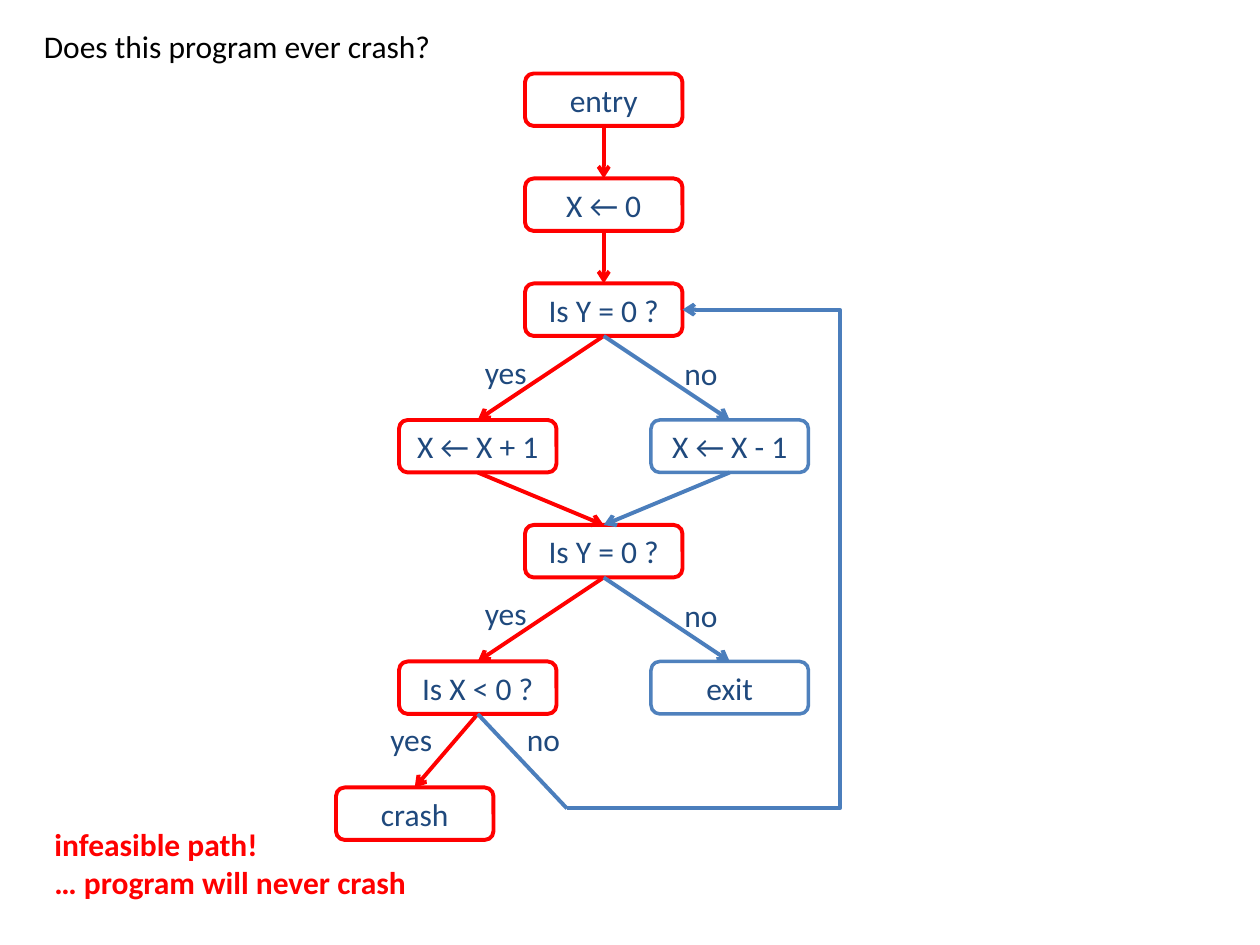
import pptx
import pptx.util
import pptx.dml.color
import pptx.enum.shapes
import pptx.enum.text
import pptx.oxml
import pptx.oxml.ns

# Positions are in grid units of 1/12 inch.
UNIT = pptx.util.Inches(1) / 12
BOX_W, BOX_H = 15, 5
TOP, BOTTOM = 0, 2  # connection sites of a box

THEME = dict(font="Calibri", size=18, text="1F497D", title="000000",
             path="FF0000", node="4F81BD", edge="4B7EBC",
             path_line=2.25, node_line=2, edge_line=2.25)

# name: (text, column, row, style)
NODES = {
    "entry": ("entry", 50, 7, "path"),
    "init": ("X ← 0", 50, 17, "path"),
    "first test": ("Is Y = 0 ?", 50, 27, "path"),
    "add": ("X ← X + 1", 38, 40, "path"),
    "subtract": ("X ← X - 1", 62, 40, "node"),
    "second test": ("Is Y = 0 ?", 50, 50, "path"),
    "sign test": ("Is X < 0 ?", 38, 63, "path"),
    "exit": ("exit", 62, 63, "node"),
    "crash": ("crash", 32, 75, "path"),
}
EDGES = [
    ("entry", "init", "path"),
    ("init", "first test", "path"),
    ("first test", "add", "path"),
    ("first test", "subtract", "edge"),
    ("add", "second test", "path"),
    ("subtract", "second test", "edge"),
    ("second test", "sign test", "path"),
    ("second test", "exit", "edge"),
    ("sign test", "crash", "path"),
]
# text lines, left, top, width, height, colour, bold, wrap
TEXTS = [
    *[(["yes"], x, y, 6.5, 4.8, "text", False, False)
      for x, y in [(45, 33), (45, 56), (36, 68)]],
    *[(["no"], x, y, 5.6, 4.8, "text", False, False)
      for x, y in [(64, 33.1), (64, 56.2), (49, 68)]],
    (["infeasible path!", "… program will never crash"],
     4, 78, 36.1, 8.5, "path", True, False),
    (["Does this program ever crash?"], 3, 2, 44, 4.8, "title", False, True),
]
LOOP_START, LOOP_LANE, LOOP_END = (54, 77), 80, (65, 29.5)


def grid(*values):
    return [round(v * UNIT) for v in values]


def color(name):
    return pptx.dml.color.RGBColor.from_string(THEME[name])


def write(sp, lines, name, bold=False, align=pptx.enum.text.PP_ALIGN.LEFT):
    tf = sp.text_frame
    tf.text = "\n".join(lines)
    for p in tf.paragraphs:
        p.alignment = align
        for r in p.runs:
            r.font.name = THEME["font"]
            r.font.size = pptx.util.Pt(THEME["size"])
            r.font.bold = bold
            r.font.color.rgb = color(name)
    return tf


def stroke(sp, style):
    sp.line.color.rgb = color(style)
    sp.line.width = pptx.util.Pt(THEME[style + "_line"])


def add_box(shapes, text, col, row, style):
    sp = shapes.add_shape(pptx.enum.shapes.MSO_SHAPE.ROUNDED_RECTANGLE,
                          *grid(col, row, BOX_W, BOX_H))
    sp.shadow.inherit = False
    sp.fill.background()
    stroke(sp, style)
    tf = write(sp, [text], "text", align=pptx.enum.text.PP_ALIGN.CENTER)
    tf.vertical_anchor = pptx.enum.text.MSO_ANCHOR.MIDDLE
    return sp


def add_line(shapes, start, end, style, kind="STRAIGHT", arrow=True):
    line = shapes.add_connector(pptx.enum.shapes.MSO_CONNECTOR[kind],
                                *grid(*start, *end))
    stroke(line, style)
    if arrow:
        ln = line.line._get_or_add_ln()
        pptx.oxml.ns.qn("a:tailEnd")
        ln.append(pptx.oxml.parse_xml(
            '<a:tailEnd %s type="arrow"/>' % pptx.oxml.ns.nsdecls("a")))
    line._element.spPr.append(pptx.oxml.parse_xml(
        "<a:effectLst %s/>" % pptx.oxml.ns.nsdecls("a")))
    return line


def add_loop(shapes, start, lane, end):
    """Run right from start to the lane, up it, and back left to end."""
    (x1, y1), (x2, y2) = start, end
    cx, cy = (x1 + x2) / 2, (y1 + y2) / 2
    half_w, half_h = (y1 - y2) / 2, (x2 - x1) / 2  # before the quarter turn
    line = add_line(shapes, (cx + half_w, cy + half_h),
                    (cx - half_w, cy - half_h), "edge", "ELBOW")
    spPr = line._element.spPr
    spPr.find(pptx.oxml.ns.qn("a:xfrm")).set("rot", str(90 * 60000))
    geom = spPr.find(pptx.oxml.ns.qn("a:prstGeom"))
    geom.set("prst", "bentConnector4")
    turn = round((lane - x1) / (x2 - x1) * 100000)
    guides = geom.get_or_add_avLst()
    for name, value in [("adj1", 0), ("adj2", turn)]:
        guides.append(pptx.oxml.parse_xml(
            '<a:gd %s name="%s" fmla="val %d"/>'
            % (pptx.oxml.ns.nsdecls("a"), name, value)))


def main():
    prs = pptx.Presentation()
    prs.slide_width, prs.slide_height = grid(120, 90)
    shapes = prs.slides.add_slide(prs.slide_layouts[6]).shapes

    boxes = {name: add_box(shapes, *node) for name, node in NODES.items()}
    for source, target, style in EDGES:
        line = add_line(shapes, (0, 0), (0, 0), style)
        line.begin_connect(boxes[source], BOTTOM)
        line.end_connect(boxes[target], TOP)

    _, col, row, _ = NODES["sign test"]
    add_line(shapes, (col + BOX_W / 2, row + BOX_H), LOOP_START, "edge",
             arrow=False)
    add_loop(shapes, LOOP_START, LOOP_LANE, LOOP_END)

    for lines, x, y, w, h, name, bold, wrap in TEXTS:
        tf = write(shapes.add_textbox(*grid(x, y, w, h)), lines, name, bold)
        tf.word_wrap = wrap
        tf.auto_size = pptx.enum.text.MSO_AUTO_SIZE.SHAPE_TO_FIT_TEXT

    prs.save("out.pptx")


if __name__ == "__main__":
    main()
